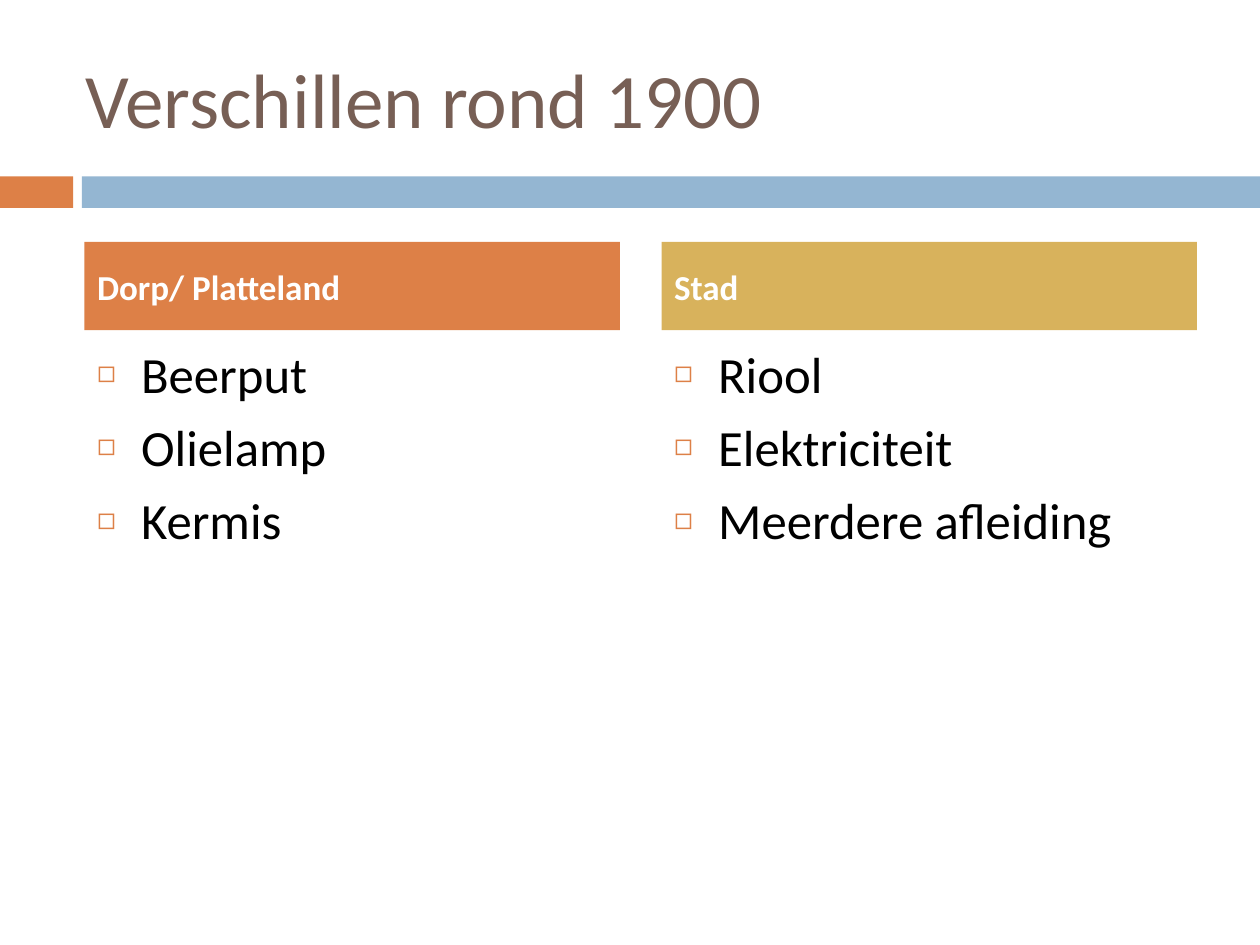
from lxml import etree
from pptx import Presentation
from pptx import util as u
from pptx.dml import color
from pptx.enum import shapes, text
from pptx.oxml import ns

COLORS = {
    "orange": "DD8047",
    "blue": "94B6D2",
    "gold": "D8B25C",
    "brown": "775F55",
    "black": "000000",
    "white": "FFFFFF",
}
FONT = "Calibri"


def rgb(name):
    return color.RGBColor.from_string(COLORS[name])


def place(part, box):
    part.left, part.top, part.width, part.height = map(u.Inches, box)


def fill_solid(part, name):
    part.fill.solid()
    part.fill.fore_color.rgb = rgb(name)


def write_lines(placeholder, lines, size, ink, anchor, bold=False, before=0):
    frame = placeholder.text_frame
    frame.word_wrap = True
    frame.auto_size = text.MSO_AUTO_SIZE.NONE
    frame.vertical_anchor = anchor
    for index, line in enumerate(lines):
        paragraph = frame.add_paragraph() if index else frame.paragraphs[0]
        paragraph.alignment = text.PP_ALIGN.LEFT
        paragraph.space_before = u.Pt(before)
        run = paragraph.add_run()
        run.text = line
        run.font.name = FONT
        run.font.size = u.Pt(size)
        run.font.bold = bold
        run.font.color.rgb = rgb(ink)


def add_bullet(paragraph):
    properties = paragraph._p.get_or_add_pPr()
    indent = u.Inches(0.35)
    properties.set("marL", str(indent))
    properties.set("indent", str(-indent))
    bullet_color = etree.SubElement(properties, ns.qn("a:buClr"))
    etree.SubElement(bullet_color, ns.qn("a:srgbClr"), val=COLORS["orange"])
    etree.SubElement(properties, ns.qn("a:buSzPct"), val="60000")
    etree.SubElement(properties, ns.qn("a:buChar"), char="◻")


def add_band(slide, left, top, width, height):
    accent_width, gap = 0.58, 0.07
    rest = accent_width + gap
    for offset, part_width, name in (
        (0, accent_width, "orange"),
        (rest, width - rest, "blue"),
    ):
        bar = slide.shapes.add_shape(
            shapes.MSO_SHAPE.RECTANGLE,
            *map(u.Inches, (left + offset, top, part_width, height)),
        )
        bar.shadow.inherit = False
        fill_solid(bar, name)
        bar.line.fill.background()


def set_title(title, box, words):
    place(title, box)
    write_lines(title, [words], 44, "brown", text.MSO_ANCHOR.MIDDLE)


def fill_column(heading, points, box, name, label, items):
    left, top, width, height = box
    heading_height, gap = 0.7, 0.05
    used = heading_height + gap
    place(heading, (left, top, width, heading_height))
    fill_solid(heading, name)
    write_lines(heading, [label], 20, "white", text.MSO_ANCHOR.MIDDLE, True, 7)
    place(points, (left, top + used, width, height - used))
    write_lines(points, items, 29, "black", text.MSO_ANCHOR.TOP, before=7)
    for paragraph in points.text_frame.paragraphs:
        add_bullet(paragraph)


def main():
    deck = Presentation()
    deck.slide_width, deck.slide_height = u.Inches(10), u.Inches(7.5)
    slide = deck.slides.add_slide(deck.slide_layouts.get_by_name("Comparison"))
    title, *columns = slide.placeholders

    add_band(slide, 0, 1.4, 10, 0.25)
    set_title(title, (0.58, 0.3, 8.92, 0.95), "Verschillen rond 1900")

    contents = (
        ("orange", "Dorp/ Platteland", ["Beerput", "Olielamp", "Kermis"]),
        ("gold", "Stad", ["Riool", "Elektriciteit", "Meerdere afleiding"]),
    )
    column_width, column_gap = 4.25, 0.33
    for index, content in enumerate(contents):
        heading, points = columns[2 * index:2 * index + 2]
        left = 0.67 + index * (column_width + column_gap)
        fill_column(heading, points, (left, 1.92, column_width, 4.67), *content)

    deck.save("out.pptx")


if __name__ == "__main__":
    main()
